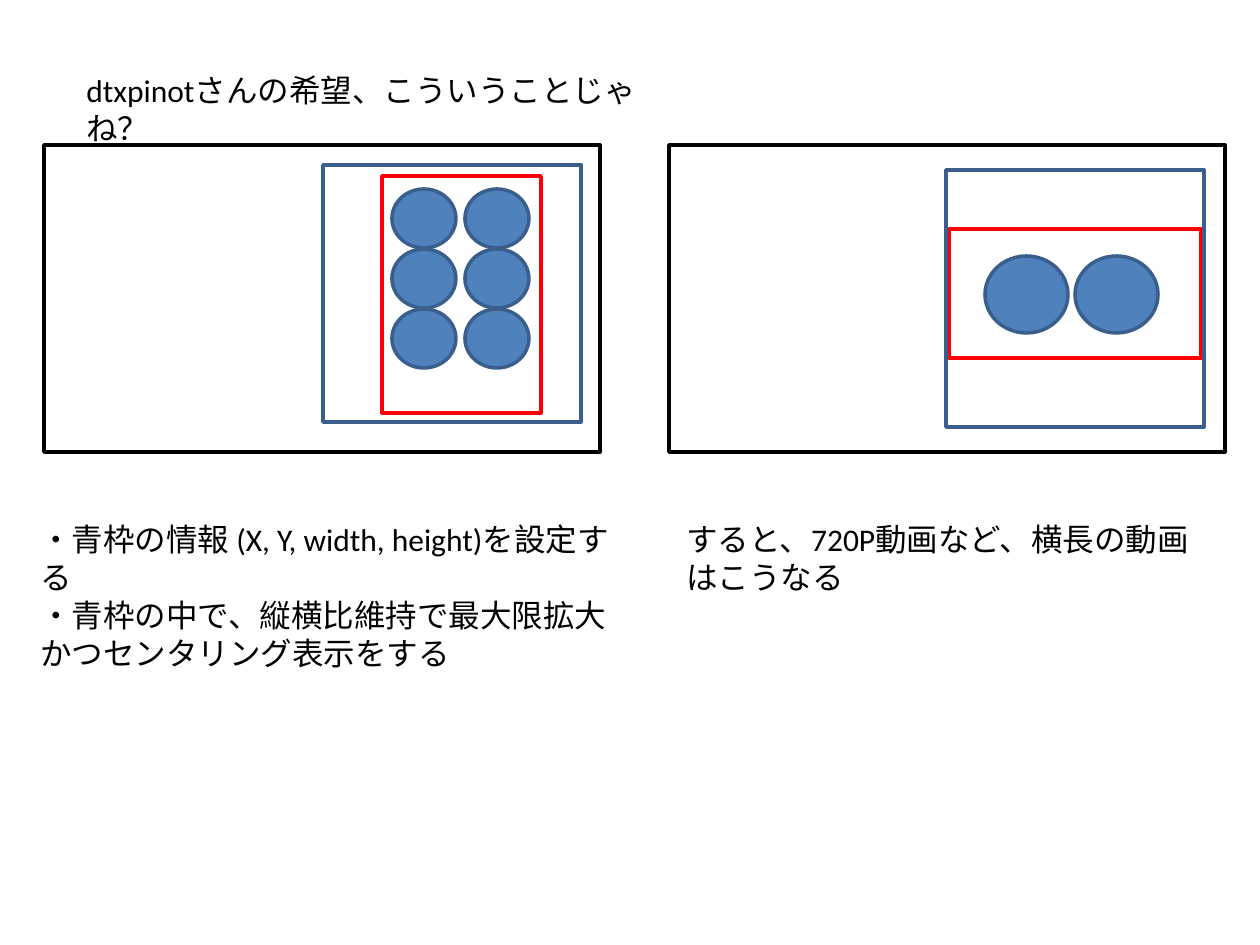
from pptx import Presentation, util as u
from pptx.dml.color import RGBColor
from pptx.enum import shapes

PX = 914400 / 126
COLORS = {"text": "000000", "screen": "000000", "video": "FF0000",
          "area": "3A5F8C", "dot": "4F81BD"}

# Content: text boxes as (left, top, width, height), paragraphs
TEXTS = [
    ((74, 65, 591, 50), ["dtxpinotさんの希望、こういうことじゃね？"]),
    ((28, 514, 605, 127), ["・青枠の情報 (X, Y, width, height)を設定する",
                           "・青枠の中で、縦横比維持で最大限拡大かつセンタリング表示をする"]),
    ((674, 514, 549, 89), ["すると、720P動画など、横長の動画はこうなる"]),
]

# Each screen holds a video of dots, fitted into the blue area
SCREENS = [
    {"screen": (44, 145, 556, 307), "video": (382, 176, 159, 237),
     "area": (323, 165, 258, 257), "dot": (392, 189, 64, 59),
     "step": (73, 60), "grid": (2, 3)},
    {"screen": (669, 145, 556, 307), "video": (949, 229, 252, 129),
     "area": (946, 170, 258, 257), "dot": (985, 256, 83, 77),
     "step": (90, 0), "grid": (2, 1)},
]


def emu(box):
    return [u.Emu(round(v * PX)) for v in box]


def rgb(name):
    return RGBColor.from_string(COLORS[name])


def add_outline(s, kind, box, line, fill=None):
    sp = s.shapes.add_shape(kind, *emu(box))
    sp.shadow.inherit = False
    sp.line.color.rgb = rgb(line)
    sp.line.width = u.Pt(2)
    if fill:
        sp.fill.solid()
        sp.fill.fore_color.rgb = rgb(fill)
    else:
        sp.fill.background()


def add_text(s, box, lines):
    tf = s.shapes.add_textbox(*emu(box)).text_frame
    tf.word_wrap = True
    tf.text = "\n".join(lines)
    for p in tf.paragraphs:
        p.font.name = "Calibri"
        p.font.size = u.Pt(18)
        p.font.color.rgb = rgb("text")


def add_screen(s, screen):
    rect = shapes.MSO_SHAPE.RECTANGLE
    for part in ("screen", "video"):
        add_outline(s, rect, screen[part], part)
    # Dots in an even grid
    x, y, w, h = screen["dot"]
    dx, dy = screen["step"]
    cols, rows = screen["grid"]
    for row in range(rows):
        for col in range(cols):
            add_outline(s, shapes.MSO_SHAPE.OVAL,
                        (x + col * dx, y + row * dy, w, h), "area", "dot")
    add_outline(s, rect, screen["area"], "area")


def main():
    prs = Presentation()
    prs.slide_width, prs.slide_height = u.Inches(10), u.Inches(7.5)
    s = prs.slides.add_slide(prs.slide_layouts[6])
    for box, lines in TEXTS:
        add_text(s, box, lines)
    for screen in SCREENS:
        add_screen(s, screen)
    prs.save("out.pptx")


if __name__ == "__main__":
    main()
